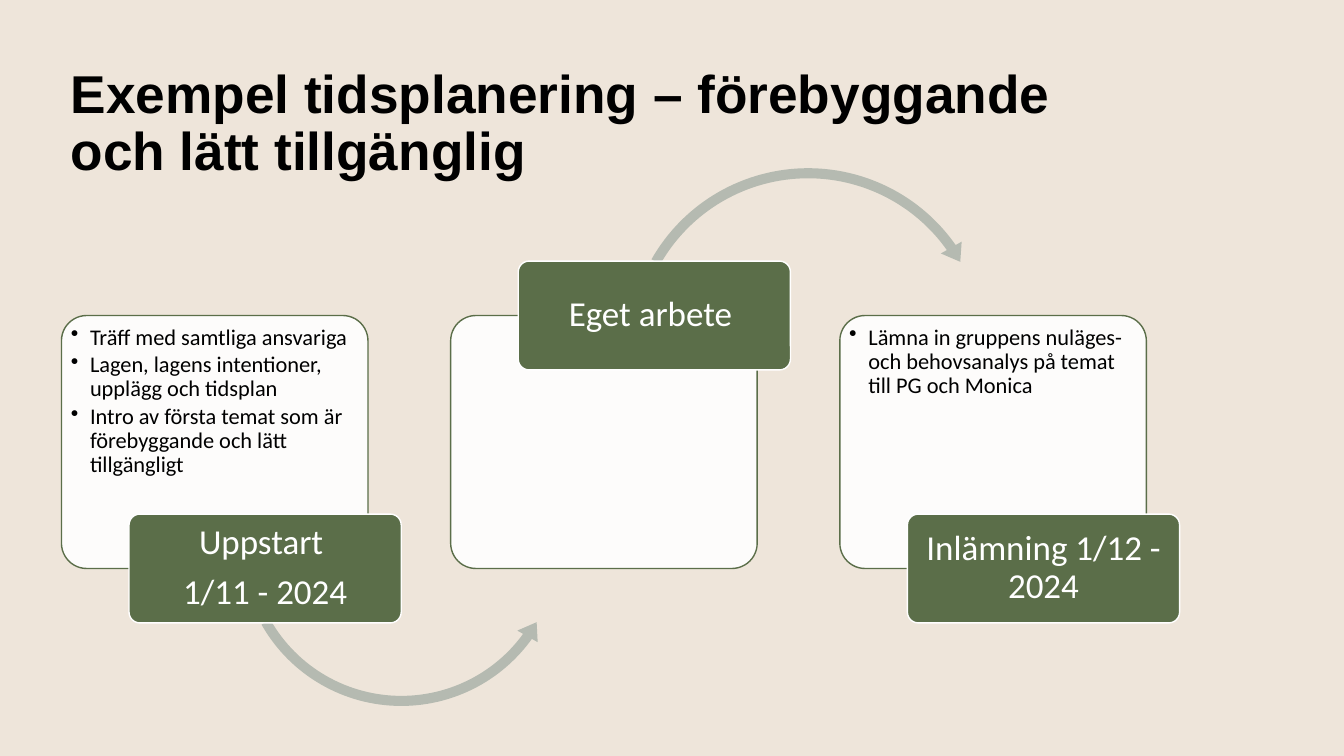
from dataclasses import dataclass
from lxml import etree
from pptx import Presentation
from pptx import util as u
from pptx.dml.color import RGBColor
from pptx.enum import shapes, text
from pptx.oxml.ns import qn

SAND = RGBColor(0xEE, 0xE5, 0xDA)
GREEN = RGBColor(0x5B, 0x6E, 0x49)
SAGE = RGBColor(0xB5, 0xBA, 0xB1)
WHITE = RGBColor(0xFF, 0xFF, 0xFF)
BLACK = RGBColor(0, 0, 0)

PAGE_WIDTH, PAGE_HEIGHT = 13.33, 7.5
# Step grid: three equal columns in one row
GRID_LEFT, GRID_TOP, COLUMN_PITCH = 0.61, 3.13, 3.86
CARD_WIDTH, CARD_HEIGHT = 3.04, 2.51
LABEL_WIDTH, LABEL_HEIGHT, LABEL_SHIFT = 2.7, 1.08, 0.67
BULLET_INDENT = 0.19


@dataclass
class Box:
    left: float
    top: float
    width: float
    height: float

    def inches(self):
        return [u.Inches(v) for v in (self.left, self.top, self.width, self.height)]


@dataclass
class Arrow:
    preset: object
    shift_x: float
    shift_y: float
    size: float
    adjustments: tuple


@dataclass
class Step:
    bullets: list
    label: list
    label_on_top: bool = False
    arrow: Arrow = None


SHAPE = shapes.MSO_SHAPE
STEPS = [
    Step(["Träff med samtliga ansvariga",
          "Lagen, lagens intentioner, upplägg och tidsplan",
          "Intro av första temat som är förebyggande och lätt tillgängligt"],
         ["Uppstart ", "1/11 - 2024"],
         arrow=Arrow(SHAPE.LEFT_CIRCULAR_ARROW, 1.71, 0.62, 3.32,
                     (0.03, 3.73, 21.49, 90.25, 0.035))),
    Step([], ["Eget arbete "], label_on_top=True,
         arrow=Arrow(SHAPE.CIRCULAR_ARROW, 1.69, -1.53, 3.71,
                     (0.027, 3.31, 194.93, 125.76, 0.032))),
    Step(["Lämna in gruppens nuläges- och behovsanalys på temat till PG och Monica"],
         ["Inlämning 1/12 - 2024"]),
]


def add_block(page, preset, box, fill, line=None, adjustments=(0.1,)):
    block = page.shapes.add_shape(preset, *box.inches())
    block.shadow.inherit = False
    block.fill.solid()
    block.fill.fore_color.rgb = fill
    if line is None:
        block.line.fill.background()
    else:
        block.line.color.rgb = line
        block.line.width = u.Pt(1)
    for index, value in enumerate(adjustments):
        block.adjustments[index] = value
    return block


def write(block, lines, size, color, align, anchor, side_inset, gap, bullets=False):
    frame = block.text_frame
    frame.word_wrap = True
    frame.vertical_anchor = anchor
    frame.margin_left = frame.margin_right = u.Inches(side_inset)
    frame.margin_top = frame.margin_bottom = u.Inches(0.03)
    for index, line in enumerate(lines):
        para = frame.add_paragraph() if index else frame.paragraphs[0]
        if bullets:
            props = para._p.get_or_add_pPr()
            props.set("marL", str(u.Inches(BULLET_INDENT)))
            props.set("indent", str(-u.Inches(BULLET_INDENT)))
            etree.SubElement(props, qn("a:buChar")).set("char", "•")
        para.alignment = align
        para.line_spacing = 0.9
        para.space_after = u.Pt(gap)
        span = para.add_run()
        span.text = line
        span.font.name = "Calibri"
        span.font.size = u.Pt(size)
        span.font.color.rgb = color


def add_title(page, box, wording):
    title = page.shapes.title
    title.left, title.top, title.width, title.height = box.inches()
    frame = title.text_frame
    frame.word_wrap = True
    frame.auto_size = text.MSO_AUTO_SIZE.NONE
    frame.vertical_anchor = text.MSO_ANCHOR.MIDDLE
    para = frame.paragraphs[0]
    para.alignment = text.PP_ALIGN.LEFT
    para.line_spacing = 0.9
    span = para.add_run()
    span.text = wording
    span.font.name = "Arial"
    span.font.size = u.Pt(38)
    span.font.bold = True
    span.font.color.rgb = BLACK


def add_step(page, box, step):
    # Card with bullets
    card = add_block(page, SHAPE.ROUNDED_RECTANGLE, box, WHITE, GREEN)
    tint = card._element.spPr.find(qn("a:solidFill"))[0]
    etree.SubElement(tint, qn("a:alpha")).set("val", "90000")
    if step.bullets:
        write(card, step.bullets, 16, BLACK, text.PP_ALIGN.LEFT,
              text.MSO_ANCHOR.TOP, 0.02, 2.4, bullets=True)

    # Arrow towards the next step
    if step.arrow:
        arrow = step.arrow
        arrow_box = Box(box.left + arrow.shift_x, box.top + arrow.shift_y,
                        arrow.size, arrow.size)
        add_block(page, arrow.preset, arrow_box, SAGE, adjustments=arrow.adjustments)

    # Label centred on the card's upper or lower edge
    edge = box.top if step.label_on_top else box.top + box.height
    label_box = Box(box.left + LABEL_SHIFT, edge - LABEL_HEIGHT / 2,
                    LABEL_WIDTH, LABEL_HEIGHT)
    label = add_block(page, SHAPE.ROUNDED_RECTANGLE, label_box, GREEN, WHITE)
    write(label, step.label, 25, WHITE, text.PP_ALIGN.CENTER,
          text.MSO_ANCHOR.MIDDLE, 0.05, 8.75)


def main():
    deck = Presentation()
    deck.slide_width = u.Inches(PAGE_WIDTH)
    deck.slide_height = u.Inches(PAGE_HEIGHT)
    page = deck.slides.add_slide(deck.slide_layouts[5])
    page.background.fill.solid()
    page.background.fill.fore_color.rgb = SAND

    add_title(page, Box(0.6, 0.43, 10.8, 1.62),
              "Exempel tidsplanering – förebyggande och lätt tillgänglig")
    for column, step in enumerate(STEPS):
        left = GRID_LEFT + column * COLUMN_PITCH
        add_step(page, Box(left, GRID_TOP, CARD_WIDTH, CARD_HEIGHT), step)
    deck.save("out.pptx")


if __name__ == "__main__":
    main()
